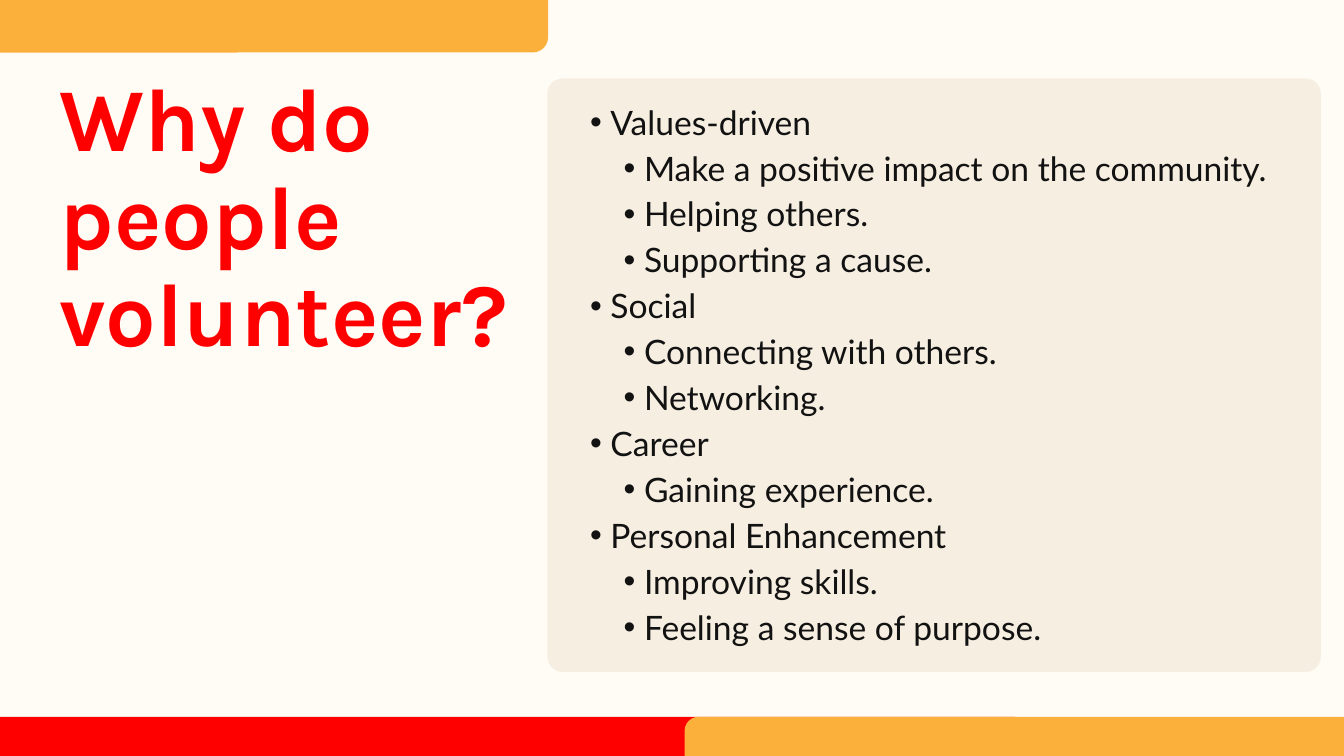
"""Build a slide that lists the reasons people volunteer."""
import pptx
import pptx.dml.color
import pptx.enum.shapes
import pptx.enum.text
import pptx.oxml.ns
import pptx.util
from lxml import etree

PX = 9525
CREAM, BEIGE, ORANGE, RED, INK = "FFFBF5", "F6EEE1", "FBB03B", "FF0000", "121212"
REASONS = {
    "Values-driven": [
        "Make a positive impact on the community.",
        "Helping others.",
        "Supporting a cause.",
    ],
    "Social": ["Connecting with others.", "Networking."],
    "Career": ["Gaining experience."],
    "Personal Enhancement": ["Improving skills.", "Feeling a sense of purpose."],
}


def px(*lengths):
    """Turn pixel lengths into EMU."""
    return [length * PX for length in lengths]


def paint(fill, color):
    """Give a fill one solid colour."""
    fill.solid()
    fill.fore_color.rgb = pptx.dml.color.RGBColor.from_string(color)


def add_block(page, left, top, width, height, color, radius=0):
    """Add a plain rectangle, rounded when a radius is given."""
    kinds = pptx.enum.shapes.MSO_SHAPE
    kind = kinds.ROUNDED_RECTANGLE if radius else kinds.RECTANGLE
    block = page.shapes.add_shape(kind, *px(left, top, width, height))
    if radius:
        block.adjustments[0] = radius / min(width, height)
    paint(block.fill, color)
    block.line.fill.background()
    block.shadow.inherit = False


def add_text_frame(page, left, top, width, height):
    """Add a wrapping text box without margins and return its frame."""
    frame = page.shapes.add_textbox(*px(left, top, width, height)).text_frame
    frame.word_wrap = True
    frame.auto_size = pptx.enum.text.MSO_AUTO_SIZE.SHAPE_TO_FIT_TEXT
    frame.margin_left = frame.margin_top = frame.margin_right = frame.margin_bottom = 0
    return frame


def style_text(para, font, size, color, bold=False):
    """Format every run of a paragraph."""
    for span in para.runs:
        span.font.name = font
        span.font.size = pptx.util.Pt(size)
        span.font.bold = bold
        paint(span.font.fill, color)


def add_title(page, text):
    """Add the large red heading."""
    para = add_text_frame(page, 85, 104, 681, 422).paragraphs[0]
    para.text = text
    para.line_spacing = pptx.util.Pt(104)
    style_text(para, "Karla", 96, RED, bold=True)


def set_bullet(para, level):
    """Indent a paragraph for its level and give it a round bullet."""
    para.level = level
    properties = para._p.get_or_add_pPr()
    indent, hanging = px(9 + 48 * level, -29)
    properties.set("marL", str(indent))
    properties.set("indent", str(hanging))
    qn = pptx.oxml.ns.qn
    etree.SubElement(properties, qn("a:buFont"), typeface="Arial")
    etree.SubElement(properties, qn("a:buChar"), char="•")


def add_reasons(page, reasons):
    """Add the two-level bullet list."""
    frame = add_text_frame(page, 815, 145, 1019, 787)
    lines = []
    for heading, points in reasons.items():
        lines.append((1, heading))
        lines.extend((2, point) for point in points)
    for index, (level, text) in enumerate(lines):
        para = frame.add_paragraph() if index else frame.paragraphs[0]
        para.text = text
        set_bullet(para, level)
        para.space_after = pptx.util.Pt(6)
        style_text(para, "Lato", 36, INK)


def main():
    """Assemble and save the slide."""
    deck = pptx.Presentation()
    deck.slide_width, deck.slide_height = px(1920, 1080)
    page = deck.slides.add_slide(deck.slide_layouts[6])
    paint(page.background.fill, CREAM)
    add_title(page, "Why do people volunteer?")
    add_block(page, -97, 1024, 1547, 187, RED)
    add_block(page, 978, 1024, 1232, 150, ORANGE, radius=20)
    add_block(page, 782, 112, 1105, 848, BEIGE, radius=22)
    add_reasons(page, REASONS)
    add_block(page, -375, -75, 1158, 150, ORANGE, radius=22)
    deck.save("out.pptx")


if __name__ == "__main__":
    main()
